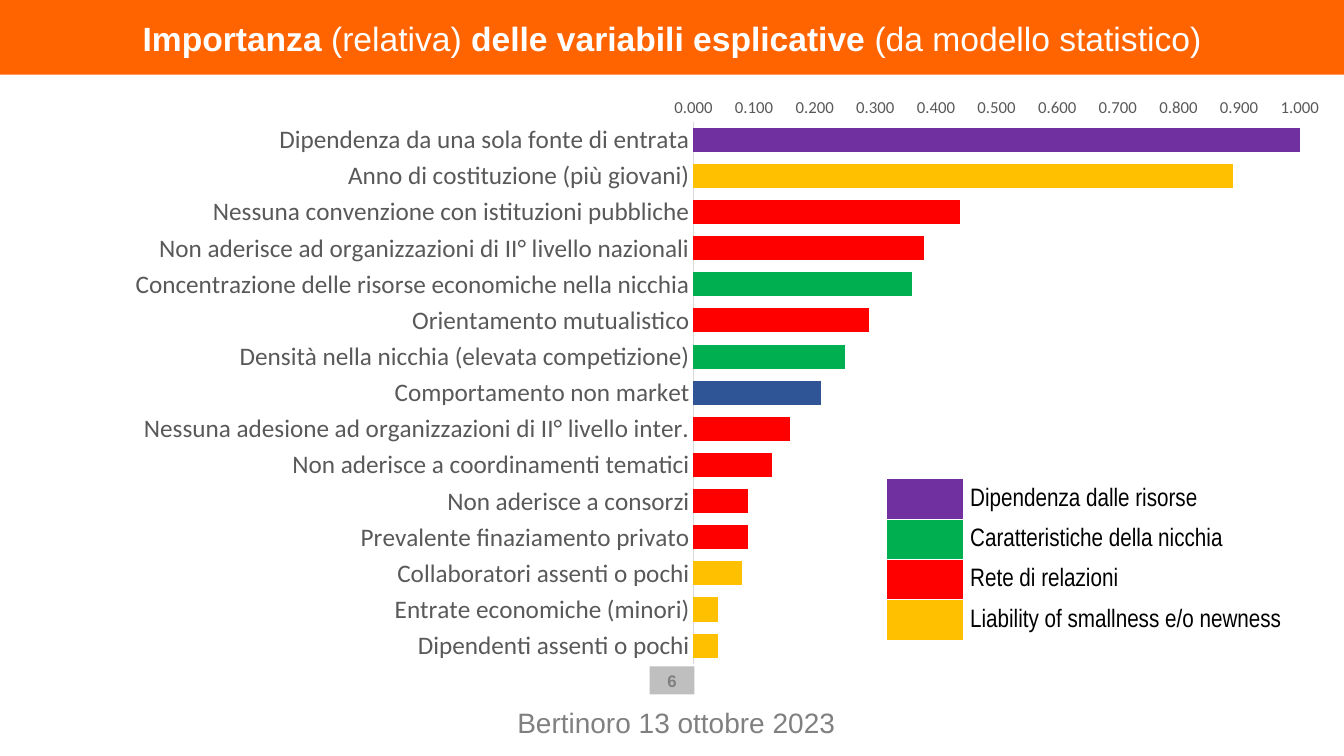
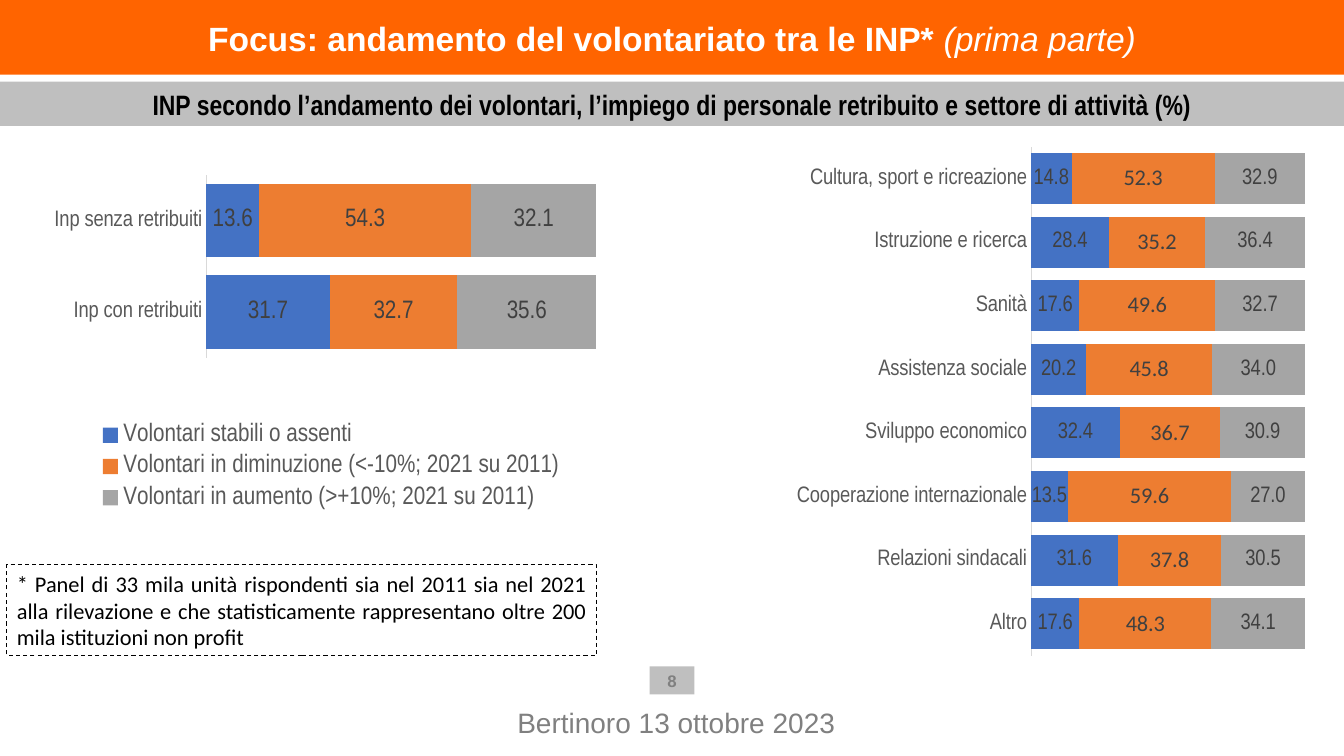
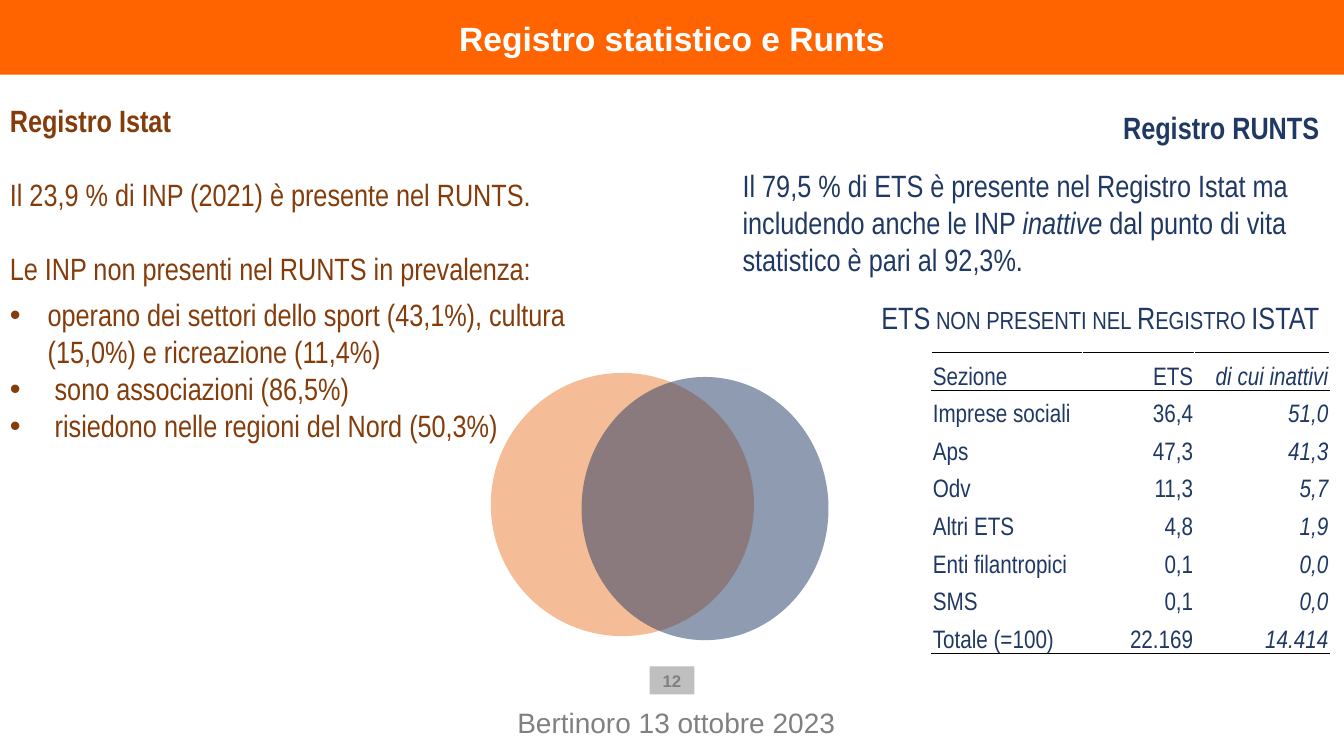
from dataclasses import dataclass

from lxml.etree import SubElement
from pptx import Presentation
from pptx.chart.data import CategoryChartData
from pptx.dml.color import RGBColor
from pptx.enum.chart import XL_CHART_TYPE as Kind, XL_LEGEND_POSITION as Side, XL_TICK_MARK as Tick
from pptx.enum.dml import MSO_LINE as Dash
from pptx.enum.shapes import MSO_SHAPE as Form
from pptx.enum.text import MSO_ANCHOR as Anchor, MSO_AUTO_SIZE as Fit, PP_ALIGN as Align
from pptx.oxml.ns import qn
from pptx.util import Pt

WHITE = RGBColor(255, 255, 255)
BLACK = RGBColor(0, 0, 0)
BRAND = RGBColor(0xFF, 0x64, 0x00)
BAND = RGBColor(0xBF, 0xBF, 0xBF)
MUTED = RGBColor(0x80, 0x80, 0x80)
AXIS = RGBColor(0xD9, 0xD9, 0xD9)
LABEL = RGBColor(0x59, 0x59, 0x59)
VALUE = RGBColor(0x40, 0x40, 0x40)
PURPLE = RGBColor(0x70, 0x30, 0xA0)
GREEN = RGBColor(0x00, 0xB0, 0x50)
RED = RGBColor(0xFF, 0, 0)
GOLD = RGBColor(0xFF, 0xC0, 0x00)
STEEL = RGBColor(0x2F, 0x55, 0x97)
BLUE = RGBColor(0x44, 0x72, 0xC4)
ORANGE = RGBColor(0xED, 0x7D, 0x31)
GREY = RGBColor(0xA5, 0xA5, 0xA5)
BROWN = RGBColor(0x84, 0x3C, 0x0B)
NAVY = RGBColor(0x20, 0x38, 0x64)

SANS, NARROW, BODY = "Arial", "Arial Narrow", "Calibri"
WIDE, HIGH = 960, 540
FOOTER = "Bertinoro 13 ottobre 2023"


@dataclass
class Para:
    """Runs are (text, marks) pairs; marks: b bold, i italic, s small caps."""
    runs: list
    align: Align = Align.LEFT
    before: float = 0
    hang: float = 0


def line(text, marks="", align=Align.LEFT, before=0, hang=0):
    return Para([(text, marks)], align, before, hang)


# Content

FACTORS = [
    ("Dipendenza da una sola fonte di entrata", 1, PURPLE),
    ("Anno di costituzione (più giovani)", 0.89, GOLD),
    ("Nessuna convenzione con istituzioni pubbliche", 0.44, RED),
    ("Non aderisce ad organizzazioni di II° livello nazionali", 0.38, RED),
    ("Concentrazione delle risorse economiche nella nicchia", 0.36, GREEN),
    ("Orientamento mutualistico", 0.29, RED),
    ("Densità nella nicchia (elevata competizione)", 0.25, GREEN),
    ("Comportamento non market", 0.21, STEEL),
    ("Nessuna adesione ad organizzazioni di II° livello inter.", 0.16, RED),
    ("Non aderisce a coordinamenti tematici", 0.13, RED),
    ("Non aderisce a consorzi", 0.09, RED),
    ("Prevalente finaziamento privato", 0.09, RED),
    ("Collaboratori assenti o pochi", 0.08, GOLD),
    ("Entrate economiche (minori)", 0.04, GOLD),
    ("Dipendenti assenti o pochi", 0.04, GOLD),
]
GROUPS = [
    ("Dipendenza dalle risorse", PURPLE, 24.5),
    ("Caratteristiche della nicchia", GREEN, 24.5),
    ("Rete di relazioni", RED, 22.3),
    ("Liability of smallness e/o newness", GOLD, 23.8),
]
TRENDS = [
    ("Volontari stabili o assenti", BLUE),
    ("Volontari in diminuzione (<-10%; 2021 su 2011)", ORANGE),
    ("Volontari in aumento (>+10%; 2021 su 2011)", GREY),
]
STAFF = [
    ("Inp con retribuiti", 31.7, 32.7, 35.6),
    ("Inp senza retribuiti", 13.6, 54.3, 32.1),
]
SECTORS = [
    ("Cultura, sport e ricreazione", 14.8, 52.3, 32.9),
    ("Istruzione e ricerca", 28.4, 35.2, 36.4),
    ("Sanità", 17.6, 49.6, 32.7),
    ("Assistenza sociale", 20.2, 45.8, 34.0),
    ("Sviluppo economico", 32.4, 36.7, 30.9),
    ("Cooperazione internazionale", 13.5, 59.6, 27.0),
    ("Relazioni sindacali", 31.6, 37.8, 30.5),
    ("Altro", 17.6, 48.3, 34.1),
]
SUBHEAD = ("INP secondo l’andamento dei volontari, l’impiego di personale retribuito "
           "e settore di attività (%)")
NOTE = ("* Panel di 33 mila unità rispondenti sia nel 2011 sia nel 2021 alla rilevazione "
        "e che statisticamente rappresentano oltre 200 mila istituzioni non profit")
ISTAT = [
    line("Registro Istat", "b"),
    line("Il 23,9 % di INP (2021) è presente nel RUNTS.", before=26.4),
    line("Le INP non presenti nel RUNTS in prevalenza:", before=26.4),
    line("operano dei settori dello sport (43,1%), cultura (15,0%) e ricreazione (11,4%)",
         before=7, hang=27),
    line("sono associazioni (86,5%)", hang=32),
    line("risiedono nelle regioni del Nord (50,3%)", hang=32),
]
RUNTS = [
    line("Registro RUNTS", "b", Align.RIGHT),
    Para([("Il 79,5 % di ETS è presente nel Registro Istat ma includendo anche le INP ", ""),
          ("inattive ", "i"),
          ("dal punto di vita statistico è pari al 92,3%.", "")], before=15),
    line("ETS non presenti nel Registro ISTAT", "s", Align.RIGHT, 15),
]
SECTIONS = [
    ("Sezione", "ETS", "di cui inattivi"),
    ("Imprese sociali", "36,4", "51,0"),
    ("Aps", "47,3", "41,3"),
    ("Odv", "11,3", "5,7"),
    ("Altri ETS", "4,8", "1,9"),
    ("Enti filantropici", "0,1", "0,0"),
    ("SMS", "0,1", "0,0"),
    ("Totale (=100)", "22.169", "14.414"),
]
CIRCLES = [((350.6, 266.4, 188, 188), ORANGE), ((415.4, 269.3, 176.4, 188), NAVY)]


# Text and shapes

def style(font, size, face, color):
    font.size, font.name = Pt(size), face
    font.color.rgb = color


def mark(font, marks):
    font.bold, font.italic = "b" in marks, "i" in marks


def write(frame, paras, size, face, color):
    for n, item in enumerate(paras):
        para = frame.add_paragraph() if n else frame.paragraphs[0]
        para.alignment = item.align
        if item.before:
            para.space_before = Pt(item.before)
        if item.hang:
            props = para._p.get_or_add_pPr()
            props.set("marL", str(Pt(item.hang)))
            props.set("indent", str(-Pt(item.hang)))
            SubElement(props, qn("a:buFont"), typeface=SANS)
            SubElement(props, qn("a:buChar"), char="•")
        style(para.font, size, face, color)
        same = len({marks for _, marks in item.runs}) == 1
        if same:
            mark(para.font, item.runs[0][1])
        for text, marks in item.runs:
            run = para.add_run()
            run.text = text
            if not same:
                mark(run.font, marks)
            if "s" in marks:
                run._r.get_or_add_rPr().set("cap", "small")


def inset(item, left, top, right, bottom):
    """Margins of a text frame or a table cell."""
    item.margin_left, item.margin_top = Pt(left), Pt(top)
    item.margin_right, item.margin_bottom = Pt(right), Pt(bottom)


def paint(shape, color):
    shape.fill.solid()
    shape.fill.fore_color.rgb = color


def add_text(slide, rect, paras, size, face, color):
    frame = slide.shapes.add_textbox(*map(Pt, rect)).text_frame
    frame.word_wrap = True
    write(frame, paras, size, face, color)
    return frame


def add_form(slide, form, rect, fill=None):
    shape = slide.shapes.add_shape(form, *map(Pt, rect))
    shape.shadow.inherit = False
    shape.line.fill.background()
    if fill is None:
        shape.fill.background()
    else:
        paint(shape, fill)
    return shape


def add_page(deck, number, title):
    """A slide with the title band, page number and footer."""
    slide = deck.slides.add_slide(deck.slide_layouts[5])
    head = slide.shapes.title
    head.left, head.top, head.width, head.height = map(Pt, (0, 0, WIDE, 53.3))
    paint(head, BRAND)
    frame = head.text_frame
    frame.auto_size, frame.vertical_anchor = Fit.NONE, Anchor.BOTTOM
    inset(frame, 22, 6, 22, 11.5)
    write(frame, [Para(title, Align.CENTER)], 24, SANS, WHITE)
    tag = add_form(slide, Form.RECTANGLE, (464, 476, 32, 20), BAND)
    write(tag.text_frame, [line(str(number), "b", Align.CENTER)], 12, SANS, MUTED)
    foot = add_text(slide, (284.4, 502, 397.4, 26), [line(FOOTER, "", Align.CENTER)],
                    20, SANS, MUTED)
    foot.vertical_anchor = Anchor.BOTTOM
    inset(foot, 7.2, 3.6, 7.2, 0)
    return slide


# Charts and tables

def place(part, spot, index, inner=False):
    """Manual layout of a chart part, as fractions of the chart."""
    for old in part.findall(qn("c:layout")):
        part.remove(old)
    layout = part.makeelement(qn("c:layout"), {})
    part.insert(index, layout)
    manual = SubElement(layout, qn("c:manualLayout"))
    if inner:
        SubElement(manual, qn("c:layoutTarget"), val="inner")
    for axis in "xy":
        SubElement(manual, qn(f"c:{axis}Mode"), val="edge")
    for key, value in zip("xywh", spot):
        SubElement(manual, qn(f"c:{key}"), val=str(value))


def add_bars(slide, kind, rect, cats, series, plot_at, gap, size, face, flip=True):
    """Horizontal bars; series holds (name, values, colour)."""
    data = CategoryChartData()
    data.categories = cats
    for name, values, _ in series:
        data.add_series(name, values)
    chart = slide.shapes.add_chart(kind, *map(Pt, rect), data).chart
    chart.has_title = chart.has_legend = False
    style(chart.font, size, face, LABEL)
    place(chart._chartSpace.chart.plotArea, plot_at, 0, inner=True)
    plot = chart.plots[0]
    plot.gap_width, plot.vary_by_categories = gap, False
    for bar, (_, _, color) in zip(plot.series, series):
        paint(bar.format, color)
    cat, val = chart.category_axis, chart.value_axis
    for axis in (cat, val):
        axis.has_major_gridlines = False
        axis.major_tick_mark = axis.minor_tick_mark = Tick.NONE
    cat.reverse_order = flip
    cat.format.line.color.rgb = AXIS
    cat.format.line.width = Pt(0.75)
    style(cat.tick_labels.font, size, face, LABEL)
    return chart


def add_shares(slide, rect, rows, plot_at, size, faces, flip):
    cats, *columns = zip(*rows)
    series = [(name, vals, color) for (name, color), vals in zip(TRENDS, columns)]
    chart = add_bars(slide, Kind.BAR_STACKED_100, rect, cats, series, plot_at,
                     25, 16, NARROW, flip)
    chart.value_axis.visible = False
    chart.plots[0].overlap = 100
    for bar, face in zip(chart.plots[0].series, faces):
        labels = bar.data_labels
        labels.show_value = True
        labels.number_format, labels.number_format_is_linked = "0.0", False
        style(labels.font, size, face, VALUE)
    return chart


def add_grid(slide, left, top, widths, heights):
    table = slide.shapes.add_table(len(heights), len(widths), Pt(left), Pt(top),
                                   Pt(sum(widths)), Pt(sum(heights))).table
    table.first_row = table.horz_banding = False
    for col, width in zip(table.columns, widths):
        col.width = Pt(width)
    for row, height in zip(table.rows, heights):
        row.height = Pt(height)
    return table


def dress(cell, fill, dark=""):
    """Fill and borders; dark names the black sides, the others are white."""
    props = cell._tc.get_or_add_tcPr()
    for side in "LRTB":
        edge = SubElement(props, qn(f"a:ln{side}"), w=str(Pt(1)))
        paper = SubElement(edge, qn("a:solidFill"))
        SubElement(paper, qn("a:srgbClr"), val=str(BLACK if side in dark else WHITE))
    paint(cell, fill)


# Slides

def factors(deck):
    slide = add_page(deck, 6, [("Importanza ", "b"), ("(relativa)", ""),
                               (" delle variabili esplicative ", "b"),
                               ("(da modello statistico)", "")])
    cats, values, colors = zip(*FACTORS)
    chart = add_bars(slide, Kind.BAR_CLUSTERED, (6.5, 58.3, 947.5, 427), cats,
                     [("Importanza", values, BLUE)], (0.516, 0.067, 0.457, 0.907),
                     50, 18, BODY)
    for n, color in enumerate(colors):
        paint(chart.plots[0].series[0].points[n].format, color)
    axis = chart.value_axis
    axis.minimum_scale, axis.maximum_scale, axis.major_unit = 0, 1, 0.1
    axis.format.line.fill.background()
    ticks = axis.tick_labels
    ticks.number_format, ticks.number_format_is_linked = "0.000", False
    style(ticks.font, 12, BODY, LABEL)

    key = add_grid(slide, 633.5, 342, (54.5, 272), [high for *_, high in GROUPS])
    for n, (name, color, _) in enumerate(GROUPS):
        dress(key.cell(n, 0), color)
        cell = key.cell(n, 1)
        dress(cell, WHITE)
        inset(cell, 5, 1, 1, 0)
        cell.vertical_anchor = Anchor.MIDDLE
        write(cell.text_frame, [line(name)], 18, NARROW, BLACK)


def focus(deck):
    slide = add_page(deck, 8, [("Focus: andamento del volontariato tra le INP* ", "b"),
                               ("(prima parte)", "i")])
    chart = add_shares(slide, (5, 104.4, 421, 291.6), STAFF,
                       (0.338, 0.07, 0.662, 0.449), 18, [NARROW] * 3, False)
    chart.has_legend = True
    legend = chart.legend
    legend.position, legend.include_in_layout = Side.BOTTOM, False
    style(legend.font, 18, NARROW, LABEL)
    place(legend._element, (0.14, 0.66, 0.82, 0.25), 1)
    add_shares(slide, (531.4, 104.4, 429, 364.3), SECTORS,
               (0.478, 0, 0.456, 1), 16, [NARROW, BODY, NARROW], True)

    note = add_form(slide, Form.RECTANGLE, (5, 403, 421, 65.5))
    note.line.color.rgb = BLACK
    note.line.width, note.line.dash_style = Pt(0.75), Dash.DASH
    write(note.text_frame, [line(NOTE, "", Align.JUSTIFY)], 16, BODY, BLACK)
    band = add_form(slide, Form.RECTANGLE, (0, 58.3, WIDE, 31.7), BAND)
    write(band.text_frame, [line(SUBHEAD, "b", Align.CENTER)], 20, NARROW, BLACK)


def registers(deck):
    slide = add_page(deck, 12, [("Registro statistico e Runts", "b")])
    for rect, color in CIRCLES:
        disc = add_form(slide, Form.OVAL, rect, color)
        tint = disc._element.spPr.find(qn("a:solidFill"))[0]
        SubElement(tint, qn("a:alpha"), val="50000")
    add_text(slide, (0, 69, 426, 289), ISTAT, 22, NARROW, BROWN)
    add_text(slide, (523.4, 74.2, 426, 170), RUNTS, 22, NARROW, NAVY)

    last = len(SECTIONS) - 1
    dark = {0: "TB", 1: "T", last: "B"}
    grid = add_grid(slide, 665.3, 252, (108, 80, 96.5), [26.9] * len(SECTIONS))
    for r, row in enumerate(SECTIONS):
        for c, text in enumerate(row):
            cell = grid.cell(r, c)
            dress(cell, WHITE, dark.get(r, ""))
            inset(cell, 1, 1, 1, 0)
            cell.vertical_anchor = Anchor.BOTTOM
            item = line(text, "i" if c == 2 else "", Align.RIGHT if c else Align.LEFT)
            write(cell.text_frame, [item], 18, NARROW, NAVY)


def main():
    deck = Presentation()
    deck.slide_width, deck.slide_height = Pt(WIDE), Pt(HIGH)
    for build in (factors, focus, registers):
        build(deck)
    deck.save("out.pptx")


if __name__ == "__main__":
    main()
